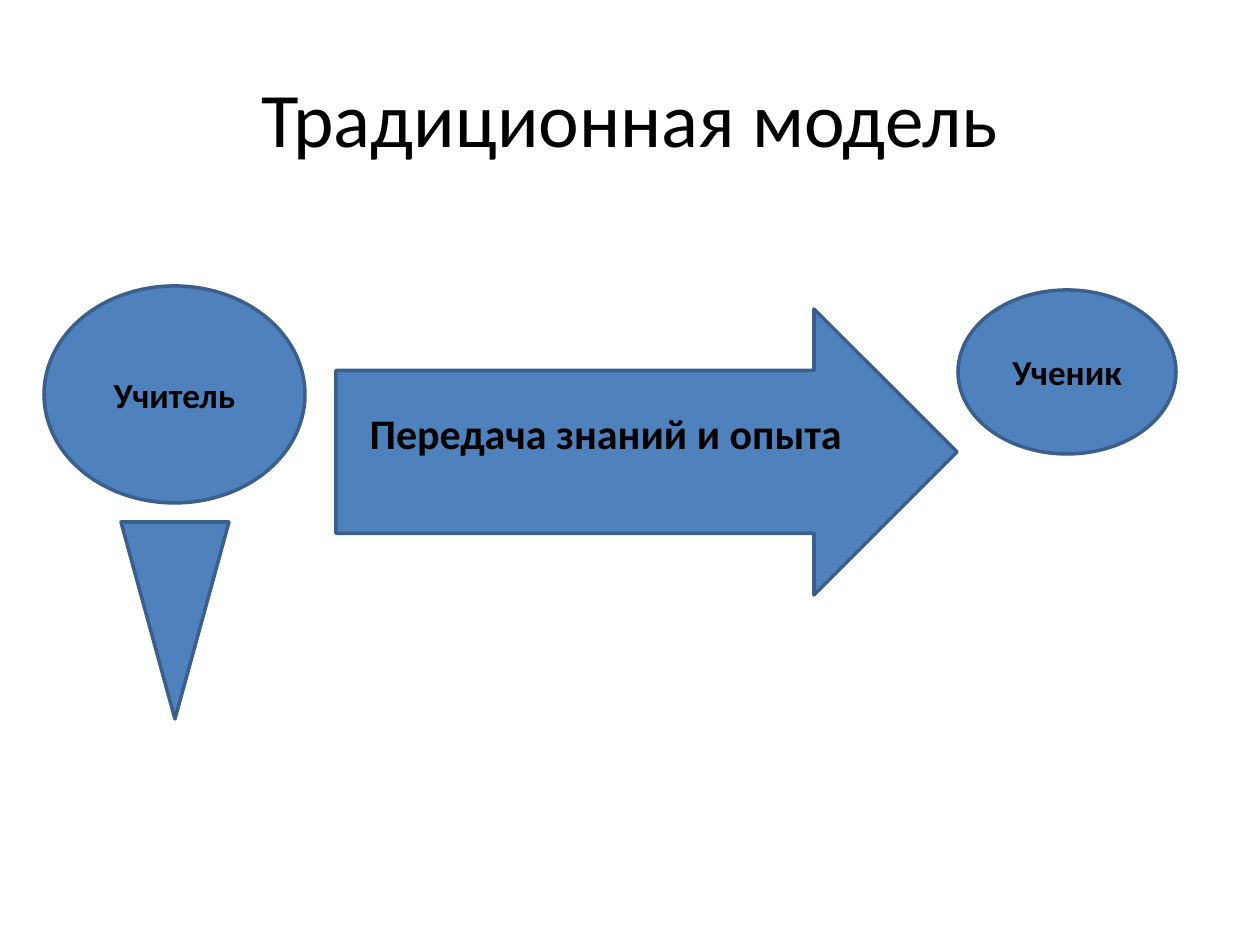
from pptx import Presentation
from pptx import util as u
from pptx.dml.color import RGBColor
from pptx.enum import shapes, text

SCALE = 914400 / 126  # EMU per px


def px(n):
    return u.Emu(round(n * SCALE))


def color(hex_code):
    return RGBColor.from_string(hex_code)


prs = Presentation()
prs.slide_width, prs.slide_height = px(1260), px(945)
slide = prs.slides.add_slide(prs.slide_layouts[5])

# Title
title = slide.shapes.title
title.left, title.top, title.width, title.height = px(63), px(38), px(1134), px(158)
title.text_frame.text = "Традиционная модель"
title.text_frame.vertical_anchor = text.MSO_ANCHOR.MIDDLE
heading = title.text_frame.paragraphs[0]
heading.alignment = text.PP_ALIGN.CENTER
heading.font.name = "Calibri"
heading.font.size = u.Pt(44)
heading.font.color.rgb = color("000000")

# Teacher figure (head and body grouped), student, and the transfer arrow
teacher = slide.shapes.add_group_shape().shapes
kind = shapes.MSO_SHAPE
parts = [
    (teacher, kind.FLOWCHART_CONNECTOR, (44, 286, 261, 217), "Учитель", 20),
    (teacher, kind.FLOWCHART_MERGE, (121, 522, 108, 197), "", 20),
    (slide.shapes, kind.FLOWCHART_CONNECTOR, (958, 290, 218, 164), "Ученик", 20),
    (slide.shapes, kind.RIGHT_ARROW, (336, 309, 621, 286), "Передача знаний и опыта", 24),
]
for parent, preset, box, label, size in parts:
    part = parent.add_shape(preset, *map(px, box))
    part.shadow.inherit = False
    part.fill.solid()
    part.fill.fore_color.rgb = color("4F81BD")
    part.line.color.rgb = color("3A5F8C")
    part.line.width = u.Pt(2)
    if label:
        frame = part.text_frame
        frame.text = label
        frame.word_wrap = True
        frame.vertical_anchor = text.MSO_ANCHOR.MIDDLE
        caption = frame.paragraphs[0]
        caption.alignment = text.PP_ALIGN.CENTER
        caption.font.name = "Calibri"
        caption.font.size = u.Pt(size)
        caption.font.bold = True
        caption.font.color.rgb = color("000000")

# The arrow comes last; its caption sits a little above the middle
part.adjustments[0] = 0.57
part.adjustments[1] = 0.5
part.text_frame.margin_bottom = px(44)

prs.save("out.pptx")
